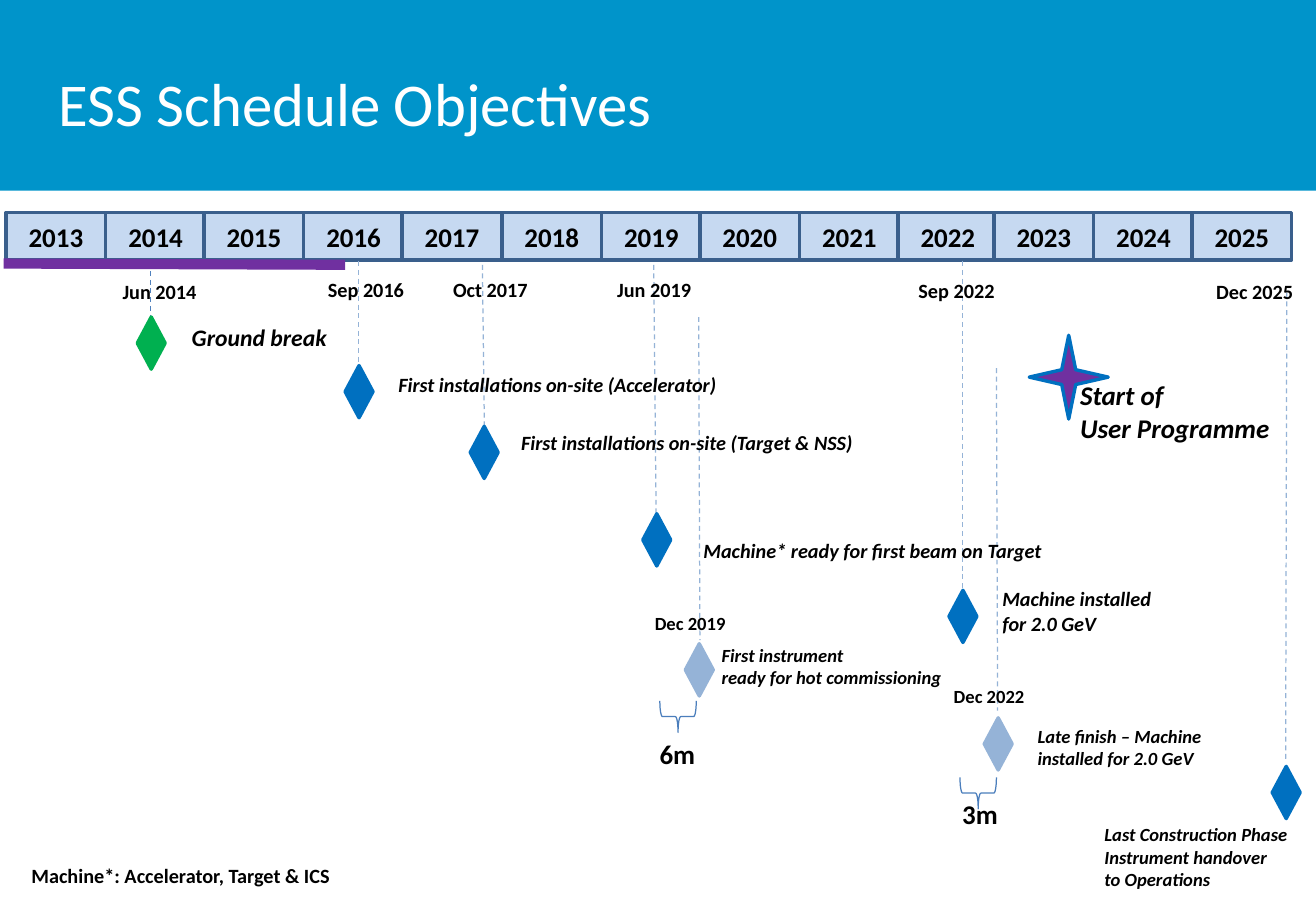
"""Build the project schedule slide: year bar, milestones and their labels."""
from lxml import etree
from pptx import Presentation
from pptx.dml.color import RGBColor
from pptx.enum.dml import MSO_LINE
from pptx.enum.shapes import MSO_CONNECTOR, MSO_SHAPE
from pptx.enum.text import MSO_ANCHOR, PP_ALIGN
from pptx.oxml.ns import qn

PX = 9144
RECT, STAR = MSO_SHAPE.RECTANGLE, MSO_SHAPE.STAR_4_POINT
DIAMOND, BRACE = MSO_SHAPE.DIAMOND, MSO_SHAPE.RIGHT_BRACE
STRAIGHT, DASH = MSO_CONNECTOR.STRAIGHT, MSO_LINE.DASH
LEFT, CENTER = PP_ALIGN.LEFT, PP_ALIGN.CENTER
TOP, MIDDLE = MSO_ANCHOR.TOP, MSO_ANCHOR.MIDDLE
HEX = {
    "band": "0094CA", "white": "FFFFFF", "black": "000000",
    "year": "C6D9F1", "edge": "3A5F8C", "purple": "7030A0",
    "blue": "0070C0", "pale": "95B3D7", "green": "00B050",
    "brace": "4B7EBC", "dash": "4F81BD",
}
RGB = {name: RGBColor.from_string(code) for name, code in HEX.items()}

deck = Presentation()
deck.slide_width, deck.slide_height = 1083 * PX, 750 * PX
slide = deck.slides.add_slide(deck.slide_layouts[6])
shapes = slide.shapes


def draw(kind, box, fill=None, edge=None, width=2):
    shape = shapes.add_shape(kind, *[n * PX for n in box])
    shape.shadow.inherit = False
    if fill:
        shape.fill.solid()
        shape.fill.fore_color.rgb = RGB[fill]
    else:
        shape.fill.background()
    if edge:
        shape.line.color.rgb = RGB[edge]
        shape.line.width = int(width * 12700)
    else:
        shape.line.fill.background()
    return shape


def write(text, box=None, host=None, size=12, bold=True, italic=False,
          color="black", align=LEFT, anchor=TOP, wrap=False):
    host = host or shapes.add_textbox(*[n * PX for n in box])
    frame = host.text_frame
    frame.text = text
    frame.word_wrap = wrap
    frame.vertical_anchor = anchor
    for para in frame.paragraphs:
        para.alignment = align
        font = para.font
        font.name, font.size = "Calibri", size * 12700
        font.bold, font.italic = bold, italic
        font.color.rgb = RGB[color]


draw(RECT, (0, 0, 1083, 157), "band")
write("ESS Schedule Objectives", (38, 22, 975, 125), size=36, bold=False,
      color="white", anchor=MIDDLE, wrap=True)

for i in range(13):
    left = 5 + round(81.6 * i) - 3 * (i > 9)
    cell = draw(RECT, (left, 175, 82, 39), "year", "edge")
    write(str(2013 + i), host=cell, size=16, align=CENTER, anchor=MIDDLE)

for x1, y1, x2, y2, color, width in [
    (124, 216, 124, 286, "dash", 0.75),
    (295, 215, 295, 317, "pale", 0.75),
    (397, 218, 399, 380, "pale", 0.75),
    (538, 218, 540, 430, "pale", 0.75),
    (575, 261, 576, 527, "pale", 0.75),
    (792, 215, 792, 502, "pale", 0.75),
    (820, 303, 821, 585, "pale", 0.75),
    (1059, 241, 1058, 627, "pale", 0.75),
    (3, 217, 284, 218, "purple", 6),
]:
    line = shapes.add_connector(STRAIGHT, *[n * PX for n in (x1, y1, x2, y2)])
    line.line.color.rgb = RGB[color]
    line.line.width = int(width * 12700)
    if width < 1:
        line.line.dash_style = DASH
    etree.SubElement(line._element.spPr, qn("a:effectLst"))

for text, left, top, width, size in [
    ("Jun 2014", 91, 225, 82, 12),
    ("Sep 2016", 260, 223, 84, 12),
    ("Oct 2017", 363, 223, 82, 12),
    ("Jun 2019", 498, 223, 82, 12),
    ("Sep 2022", 746, 224, 84, 12),
    ("Dec 2025", 991, 225, 85, 12),
    ("Dec 2019", 529, 499, 79, 11),
    ("Dec 2022", 775, 559, 79, 11),
    ("6m", 533, 602, 50, 16),
    ("3m", 782, 652, 50, 16),
    ("Machine*: Accelerator, Target & ICS", 16, 706, 272, 12),
]:
    write(text, (left, top, width, 30), size=size)

for left, top in [(545, 575), (792, 638)]:
    draw(BRACE, (left, top, 26, 30), edge="brace", width=0.75).rotation = 90

draw(STAR, (847, 276, 65, 69), "purple", "blue")

for text, box, size, wrap in [
    ("Ground break", (148, 261, 137, 34), 14, False),
    ("First installations on-site (Accelerator)", (318, 302, 290, 30), 12, False),
    ("First installations on-site (Target & NSS)", (419, 349, 302, 30), 12, False),
    ("Machine* ready for first beam on Target", (569, 438, 307, 30), 12, False),
    ("Machine installed\nfor 2.0 GeV", (815, 478, 200, 50), 12, True),
    ("First instrument\nready for hot commissioning", (584, 525, 217, 47), 11, True),
    ("Late finish – Machine installed for 2.0 GeV", (844, 592, 184, 47), 11, True),
    ("Last Construction Phase\nInstrument handover\nto Operations",
     (899, 673, 184, 66), 11, True),
    ("Start of\nUser Programme", (879, 307, 204, 64), 16, True),
]:
    write(text, box, size=size, italic=True, wrap=wrap)

for left, top, color in [
    (113, 261, "green"), (284, 301, "blue"), (387, 351, "blue"),
    (529, 423, "blue"), (781, 486, "blue"), (564, 530, "pale"),
    (810, 591, "pale"), (1047, 631, "blue"),
]:
    draw(DIAMOND, (left, top, 23, 43), color, color)

deck.save("out.pptx")
